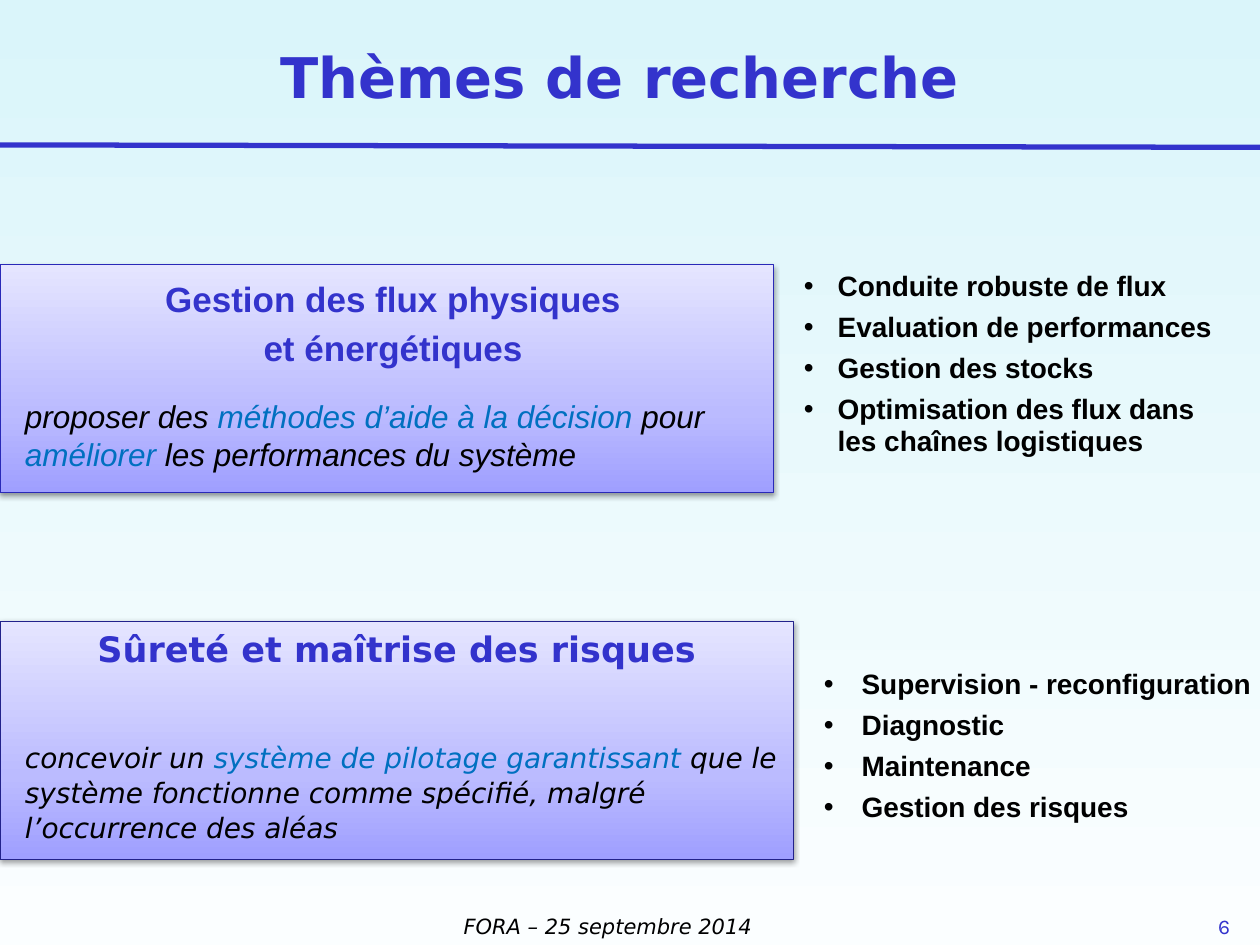
from copy import deepcopy
from dataclasses import dataclass

from lxml.etree import SubElement
from pptx import Presentation
from pptx.dml.color import RGBColor as Color
from pptx.enum.shapes import MSO_CONNECTOR as Connector, MSO_SHAPE as Shape
from pptx.enum.text import MSO_ANCHOR as Anchor, MSO_AUTO_SIZE as AutoSize, PP_ALIGN as Align
from pptx.oxml.ns import qn
from pptx.util import Pt


@dataclass(frozen=True)
class Theme:
    accent: str = "3333CC"
    highlight: str = "0070C0"
    text: str = "000000"
    background: tuple = ((0, "DAF5FA"), (1, "FBFEFF"))
    panel: tuple = ((0, "9F9FFF"), (0.35, "BBBBFF"), (1, "E5E5FF"))
    sans: str = "Arial"
    display: str = "DejaVu Sans"
    number: str = "Karla"
    title_size: int = 32
    heading_size: int = 20
    large_size: int = 18
    body_size: int = 16
    footer_size: int = 12


class SlideBuilder:
    def __init__(self, slide, theme):
        self.slide = slide
        self.theme = theme

    def gradient(self, fill, element, stops, angle):
        fill.gradient()
        fill.gradient_angle = angle
        stop_list = element.xpath(".//a:gsLst")[0]
        while len(stop_list) < len(stops):
            stop_list.append(deepcopy(stop_list[0]))
        for stop, (position, color) in zip(fill.gradient_stops, stops):
            stop.position = position
            stop.color.rgb = Color.from_string(color)

    def background(self):
        self.gradient(self.slide.background.fill, self.slide._element, self.theme.background, 270)

    def run(self, paragraph, text, font, size, color, bold=False, italic=False):
        run = paragraph.add_run()
        run.text = text
        run.font.name = font
        run.font.size = Pt(size)
        run.font.color.rgb = Color.from_string(color)
        run.font.bold = bold
        run.font.italic = italic

    def indent(self, paragraph, left, first=0):
        properties = paragraph._p.get_or_add_pPr()
        properties.set("marL", str(Pt(left)))
        properties.set("indent", str(Pt(first)))
        return properties

    def title(self, text, left, top, width, height):
        title = self.slide.shapes.title
        title.left, title.top, title.width, title.height = map(Pt, (left, top, width, height))
        frame = title.text_frame
        frame.auto_size = AutoSize.NONE
        frame.vertical_anchor = Anchor.MIDDLE
        paragraph = frame.paragraphs[0]
        paragraph.alignment = Align.LEFT
        self.run(paragraph, text, self.theme.display, self.theme.title_size, self.theme.accent, bold=True)

    def rule(self, start_x, start_y, end_x, end_y):
        points = map(Pt, (start_x, start_y, end_x, end_y))
        line = self.slide.shapes.add_connector(Connector.STRAIGHT, *points)
        line.line.color.rgb = Color.from_string(self.theme.accent)
        line.line.width = Pt(3)
        SubElement(line._element.spPr, qn("a:effectLst"))

    def text_box(self, left, top, width, height):
        box = self.slide.shapes.add_textbox(*map(Pt, (left, top, width, height)))
        box.text_frame.word_wrap = True
        return box.text_frame

    def label(self, text, left, top, width, height, font, color, italic=False):
        paragraph = self.text_box(left, top, width, height).paragraphs[0]
        self.run(paragraph, text, font, self.theme.footer_size, color, italic=italic)

    def shadow(self, shape):
        shape.shadow.inherit = False
        effects = shape._element.spPr.find(qn("a:effectLst"))
        shadow = SubElement(effects, qn("a:outerShdw"), blurRad=str(Pt(3.1)), dist=str(Pt(1.6)),
                            dir="5400000", rotWithShape="0")
        color = SubElement(shadow, qn("a:srgbClr"), val=self.theme.text)
        SubElement(color, qn("a:alpha"), val="38000")

    def panel(self, top, width, height, border, font):
        panel = self.slide.shapes.add_shape(Shape.RECTANGLE, *map(Pt, (0, top, width, height)))
        self.gradient(panel.fill, panel._element, self.theme.panel, 90)
        panel.line.color.rgb = Color.from_string(border)
        panel.line.width = Pt(0.75)
        self.shadow(panel)
        panel.text_frame.word_wrap = True
        panel.text_frame.vertical_anchor = Anchor.TOP
        return panel.text_frame, font

    def heading(self, panel, lines, left=0, before=0, spacing=1.0):
        frame, font = panel
        paragraph = frame.paragraphs[0]
        paragraph.alignment = Align.CENTER
        paragraph.space_before = Pt(before)
        paragraph.line_spacing = spacing
        self.indent(paragraph, left)
        for index, line in enumerate(lines):
            if index:
                paragraph.add_line_break()
            self.run(paragraph, line, font, self.theme.heading_size, self.theme.accent, bold=True)

    def statement(self, panel, parts, size, before, spacing):
        frame, font = panel
        paragraph = frame.add_paragraph()
        paragraph.alignment = Align.LEFT
        paragraph.space_before = Pt(before)
        paragraph.line_spacing = spacing
        self.indent(paragraph, 7.2)
        for index, part in enumerate(parts):
            color = self.theme.highlight if index % 2 else self.theme.text
            self.run(paragraph, part, font, size, color, italic=True)

    def bullets(self, items, left, top, width, height, indent, hanging, inset):
        frame = self.text_box(left, top, width, height)
        frame.margin_top = Pt(inset)
        for index, item in enumerate(items):
            paragraph = frame.add_paragraph() if index else frame.paragraphs[0]
            paragraph.level = 2
            paragraph.space_before = Pt(5)
            paragraph.line_spacing = 0.96
            properties = self.indent(paragraph, indent, -hanging)
            SubElement(properties, qn("a:buFont"), typeface=self.theme.sans)
            SubElement(properties, qn("a:buChar"), char="•")
            self.run(paragraph, item, self.theme.sans, self.theme.body_size, self.theme.text, bold=True)


def main():
    theme = Theme()
    presentation = Presentation()
    presentation.slide_width = Pt(720)
    presentation.slide_height = Pt(540)
    builder = SlideBuilder(presentation.slides.add_slide(presentation.slide_layouts[5]), theme)

    builder.background()
    builder.rule(0, 82.8, 720, 84.2)
    builder.label("6", 689, 518.4, 37.4, 21.6, theme.number, theme.accent)
    builder.label("FORA – 25 septembre 2014", 257.8, 518.4, 272.2, 21.6, theme.display, theme.text, italic=True)
    builder.title("Thèmes de recherche", 153, -7.9, 547.2, 103)

    risks = builder.panel(355, 453.6, 136, "22228B", theme.display)
    builder.heading(risks, ["Sûreté et maîtrise des risques"])
    builder.statement(risks, [
        "concevoir un ", "système de pilotage garantissant",
        " que le système fonctionne comme spécifié, malgré l’occurrence des aléas",
    ], theme.body_size, before=40, spacing=1.04)

    flows = builder.panel(151.2, 442.1, 130.3, "2929B8", theme.sans)
    builder.heading(flows, ["Gestion des flux physiques", "et énergétiques"], left=7.2, before=7, spacing=1.16)
    builder.statement(flows, [
        "proposer des ", "méthodes d’aide à la décision", " pour ", "améliorer",
        " les performances du système",
    ], theme.large_size, before=16.5, spacing=1.0)

    builder.bullets([
        "Conduite robuste de flux", "Evaluation de performances", "Gestion des stocks",
        "Optimisation des flux dans les chaînes logistiques",
    ], 399.6, 116.6, 306, 218.2, indent=72, hanging=19.4, inset=38)
    builder.bullets([
        "Supervision - reconfiguration", "Diagnostic", "Maintenance", "Gestion des risques",
    ], 456.5, 355, 286.6, 141.1, indent=28.8, hanging=21.6, inset=27.2)

    presentation.save("out.pptx")


if __name__ == "__main__":
    main()
